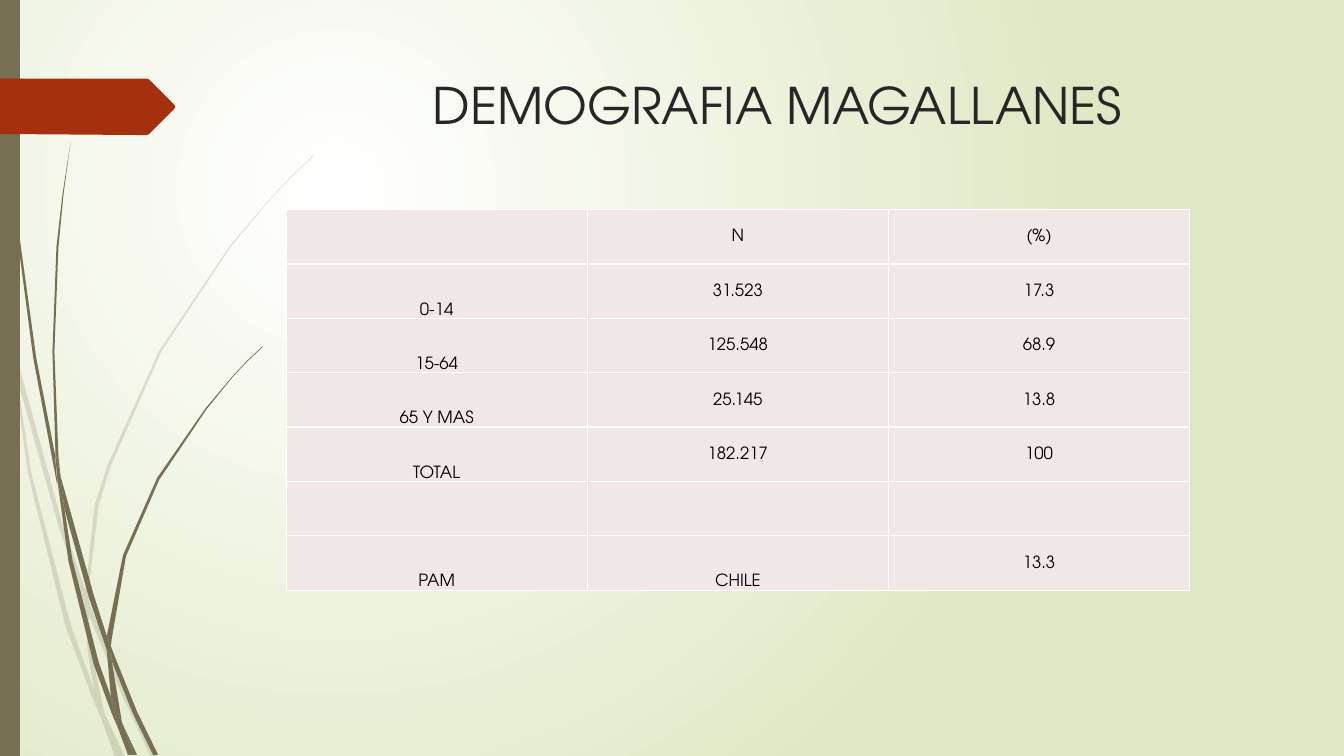
import dataclasses

import lxml.etree
import pptx
import pptx.dml.color
import pptx.enum.text
import pptx.oxml.ns
import pptx.util

Cm = pptx.util.Cm
Pt = pptx.util.Pt
qn = pptx.oxml.ns.qn
MID = pptx.enum.text.MSO_ANCHOR.MIDDLE
LOW = pptx.enum.text.MSO_ANCHOR.BOTTOM

FONT = "TeX Gyre Adventor"
UNIT = Cm(0.0254)  # outline points are in hundredths of an inch
HEX = {"stem": "766F54", "arrow": "A53010", "title": "262626", "text": "000000",
       "cell": "F0E8E7", "edge": "FFFFFF", "glow": "FFFFFF", "rim": "DFE8C4"}


@dataclasses.dataclass
class Plant:
    alpha: int  # percent
    blades: list[list[tuple[int, int]]]


@dataclasses.dataclass
class Entry:
    text: str
    anchor: pptx.enum.text.MSO_ANCHOR = MID


PALE = Plant(20, [
    [(11, 350), (9, 322), (0, 282), (0, 299), (10, 344)],
    [(58, 522), (84, 599), (85, 586), (62, 520), (14, 345), (17, 376)],
    [(92, 607), (88, 596), (88, 610), (123, 694), (150, 751), (155, 751), (127, 692)],
    [(119, 751), (124, 751), (105, 711)],
    [(93, 683), (70, 619), (31, 469), (17, 376), (11, 350), (28, 470), (65, 621),
     (92, 693), (101, 714), (99, 707)],
    [(84, 599), (87, 646), (93, 683), (96, 692), (105, 711), (103, 706), (91, 646),
     (88, 610), (88, 608)],
    [(88, 584), (98, 501), (110, 462), (160, 349), (229, 245), (268, 198), (290, 175),
     (312, 154), (312, 153), (289, 175), (268, 197), (228, 244), (158, 348), (107, 461),
     (94, 501), (85, 584), (85, 586), (88, 596)],
    [(101, 714), (114, 751), (119, 751)],
    [(88, 608), (88, 610), (88, 596), (85, 586), (84, 599)],
    [(96, 692), (93, 683), (99, 707), (101, 714), (119, 751), (105, 711)],
])
DARK = Plant(100, [
    [(7, 110), (17, 233), (33, 355), (56, 477), (57, 481), (55, 457), (55, 453),
     (36, 355), (19, 232), (8, 109), (5, 48), (4, 0), (3, 0), (4, 48)],
    [(88, 592), (106, 645), (106, 631), (93, 590), (60, 472), (64, 505)],
    [(113, 649), (110, 641), (111, 656), (132, 708), (152, 749), (157, 749), (136, 706)],
    [(110, 691), (98, 657), (72, 556), (64, 505), (57, 477), (68, 557), (93, 659),
     (111, 708), (117, 722), (116, 717)],
    [(60, 472), (58, 453), (54, 349), (58, 245), (63, 193), (70, 141), (62, 193),
     (56, 245), (52, 349), (55, 449)],
    [(133, 749), (136, 749), (122, 719)],
    [(57, 477), (64, 505), (60, 472), (55, 449), (55, 453)],
    [(111, 633), (125, 552), (158, 476), (205, 406), (231, 374), (245, 359), (261, 344),
     (260, 344), (245, 358), (231, 373), (204, 405), (156, 474), (122, 551), (106, 631),
     (110, 641)],
    [(117, 722), (127, 749), (131, 749)],
    [(106, 645), (110, 691), (116, 706), (122, 719), (121, 716), (111, 656), (109, 651)],
    [(106, 645), (109, 651), (111, 656), (110, 641), (106, 631)],
    [(116, 706), (110, 691), (116, 717), (117, 722), (130, 749), (133, 749), (122, 719)],
])
ARROW = [(0, 78), (146, 78), (148, 79), (173, 104), (174, 106), (173, 108),
         (148, 133), (146, 134), (136, 134), (0, 133)]
BAR = [(0, 0), (20, 0), (20, 750), (0, 750)]
ROWS = [
    [None, Entry("N"), Entry("(%)")],
    [Entry("0-14", LOW), Entry("31.523"), Entry("17.3")],
    [Entry("15-64", LOW), Entry("125.548"), Entry("68.9")],
    [Entry("65 Y MAS", LOW), Entry("25.145"), Entry("13.8")],
    [Entry("TOTAL", LOW), Entry("182.217"), Entry("100")],
    [None, None, None],
    [Entry("PAM", LOW), Entry("CHILE", LOW), Entry("13.3")],
]


def tint(name: str) -> pptx.dml.color.RGBColor:
    return pptx.dml.color.RGBColor.from_string(HEX[name])


def write(frame, text: str, size: int, name: str) -> None:
    frame.text = text
    line = frame.paragraphs[0]
    line.alignment = pptx.enum.text.PP_ALIGN.CENTER
    font = line.runs[0].font
    font.name, font.size = FONT, Pt(size)
    font.color.rgb = tint(name)


def trace(shapes, points: list[tuple[int, int]], name: str, alpha: int = 100) -> None:
    pen = shapes.build_freeform(*points[0], scale=UNIT)
    pen.add_line_segments(points[1:], close=True)
    shape = pen.convert_to_shape()
    shape.shadow.inherit = False
    shape.line.fill.background()
    shape.fill.solid()
    shape.fill.fore_color.rgb = tint(name)
    if alpha < 100:
        color = shape._element.spPr.find(".//" + qn("a:srgbClr"))
        lxml.etree.SubElement(color, qn("a:alpha"), val=str(alpha * 1000))


def edge(cell) -> None:
    props = cell._tc.get_or_add_tcPr()
    for spot, side in enumerate(("lnL", "lnR", "lnT", "lnB")):
        line = lxml.etree.Element(qn("a:" + side), w=str(Pt(1)))
        fill = lxml.etree.SubElement(line, qn("a:solidFill"))
        lxml.etree.SubElement(fill, qn("a:srgbClr"), val=HEX["edge"])
        props.insert(spot, line)


def glow(slide) -> None:
    fill = slide.background.fill
    fill.gradient()
    for stop, name, place in zip(fill.gradient_stops, ("glow", "rim"), (0, 1)):
        stop.color.rgb = tint(name)
        stop.position = place
    old = slide.element.find(".//" + qn("a:lin"))
    round_ = lxml.etree.Element(qn("a:path"), {"path": "circle"})
    lxml.etree.SubElement(round_, qn("a:fillToRect"),
                          l="50000", t="50000", r="100000", b="100000")
    old.getparent().replace(old, round_)


def grid(slide) -> None:
    wide, high = Cm(7.59), Cm(1.37)
    table = slide.shapes.add_table(len(ROWS), 3, Cm(7.21), Cm(5.28),
                                   wide * 3, high * len(ROWS)).table
    table.first_row = table.horz_banding = False
    for col in table.columns:
        col.width = wide
    for row, items in zip(table.rows, ROWS):
        row.height = high
        for cell, entry in zip(row.cells, items):
            cell.fill.solid()
            cell.fill.fore_color.rgb = tint("cell")
            edge(cell)
            if entry:
                cell.margin_left = cell.margin_right = cell.margin_top = Cm(0.03)
                cell.margin_bottom = 0
                cell.vertical_anchor = entry.anchor
                write(cell.text_frame, entry.text, 12, "text")


def main() -> None:
    deck = pptx.Presentation()
    deck.slide_width, deck.slide_height = Cm(33.87), Cm(19.05)
    slide = deck.slides.add_slide(deck.slide_layouts[5])
    glow(slide)

    # Plants, side bar and arrow
    for plant in (PALE, DARK):
        group = slide.shapes.add_group_shape()
        for blade in plant.blades:
            trace(group.shapes, blade, "stem", plant.alpha)
    trace(slide.shapes, BAR, "stem")
    trace(slide.shapes, ARROW, "arrow")

    # Title
    title = slide.shapes.title
    title.left, title.top = Cm(7.21), Cm(1.73)
    title.width, title.height = Cm(24.77), Cm(3.56)
    frame = title.text_frame
    frame.auto_size = pptx.enum.text.MSO_AUTO_SIZE.NONE
    frame.vertical_anchor = pptx.enum.text.MSO_ANCHOR.TOP
    write(frame, "DEMOGRAFIA MAGALLANES", 36, "title")

    # Table of age groups
    grid(slide)
    deck.save("out.pptx")


if __name__ == "__main__":
    main()
